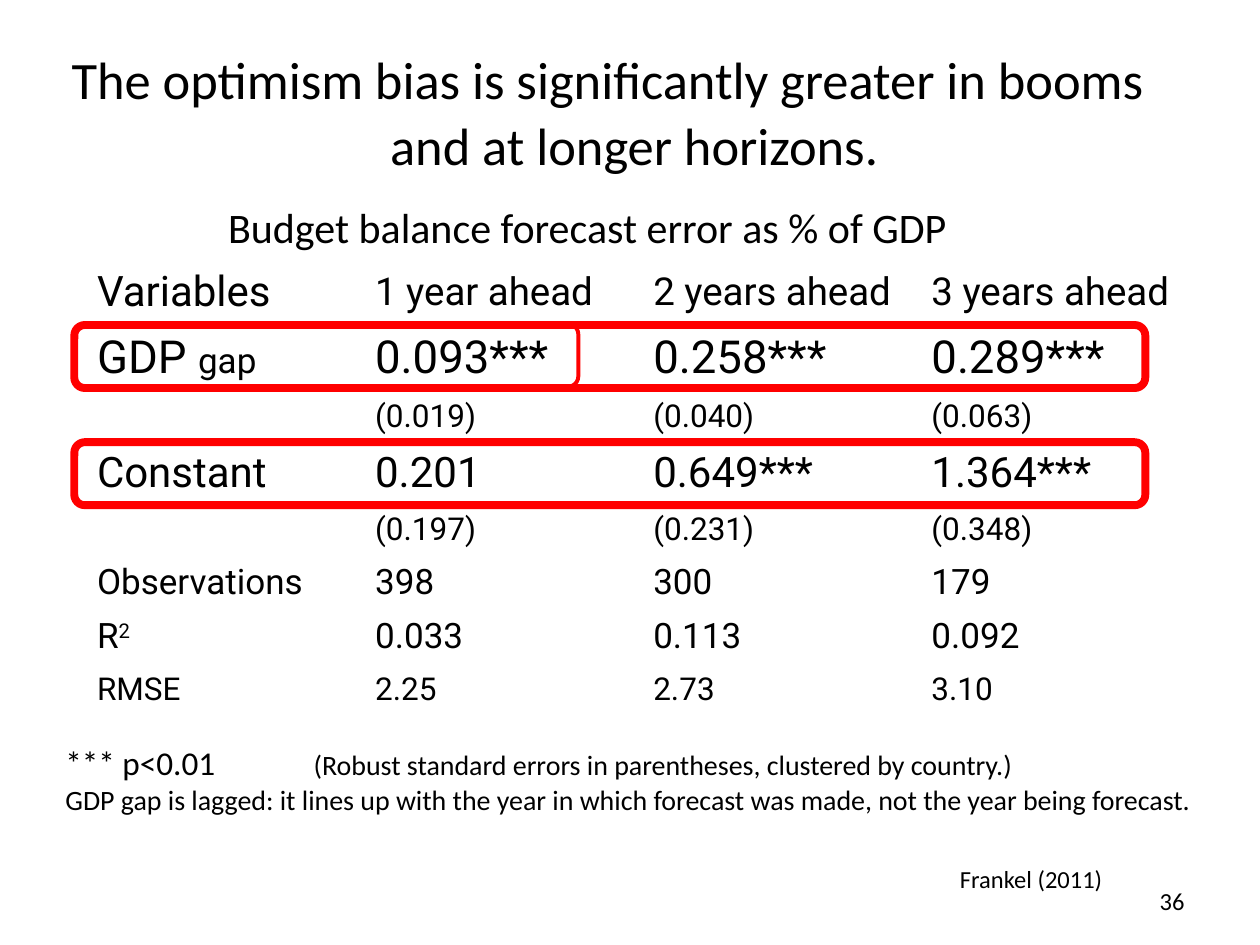
import pptx
import pptx.util
import pptx.dml.color
import pptx.enum.shapes
import pptx.enum.text
import lxml.etree
from pptx.util import Inches, Pt

COLORS = {"text": "000000", "paper": "FFFFFF", "highlight": "FF0000"}
ALIGN = pptx.enum.text.PP_ALIGN
MIDDLE = pptx.enum.text.MSO_ANCHOR.MIDDLE
SHAPES = pptx.enum.shapes.MSO_SHAPE


def color(name):
    return pptx.dml.color.RGBColor.from_string(COLORS[name])


class SlideBuilder:
    body_font = "Calibri"
    table_font = "Roboto"

    def __init__(self, deck):
        self.page = deck.slides.add_slide(deck.slide_layouts[5])

    def style(self, font, size, name=None):
        font.name = name or self.body_font
        font.size = Pt(size)
        font.color.rgb = color("text")

    def title(self, lines, bounds, size, pitch, second_indent):
        box = self.page.shapes.title
        box.left, box.top, box.width, box.height = map(Inches, bounds)
        frame = box.text_frame
        frame.text = "\n".join(lines)
        frame.margin_left = frame.margin_right = 0
        frame.vertical_anchor = MIDDLE
        for para in frame.paragraphs:
            para.alignment = ALIGN.CENTER
            para.line_spacing = Pt(pitch)
            self.style(para.font, size)
        frame.paragraphs[1]._p.get_or_add_pPr().set("marL", str(Inches(second_indent)))

    def text(self, words, bounds, size, align=ALIGN.LEFT, anchor=pptx.enum.text.MSO_ANCHOR.TOP):
        box = self.page.shapes.add_textbox(*map(Inches, bounds))
        frame = box.text_frame
        frame.word_wrap = True
        frame.vertical_anchor = anchor
        para = frame.paragraphs[0]
        para.text = words
        para.alignment = align
        self.style(para.font, size)

    def panel(self, paragraphs, bounds, tab=None):
        box = self.page.shapes.add_shape(SHAPES.RECTANGLE, *map(Inches, bounds))
        box.shadow.inherit = False
        box.fill.solid()
        box.fill.fore_color.rgb = color("paper")
        box.line.fill.background()
        frame = box.text_frame
        frame.word_wrap = True
        frame.vertical_anchor = MIDDLE
        frame.margin_left = frame.margin_right = Inches(0.01)
        frame.margin_top = frame.margin_bottom = Inches(0.01)
        for index, runs in enumerate(paragraphs):
            para = frame.paragraphs[0] if index == 0 else frame.add_paragraph()
            para.alignment = ALIGN.LEFT
            if tab:
                properties = para._p.get_or_add_pPr()
                tabs = lxml.etree.SubElement(properties, pptx.oxml.ns.qn("a:tabLst"))
                stop = lxml.etree.SubElement(tabs, pptx.oxml.ns.qn("a:tab"))
                stop.set("pos", str(Inches(tab)))
                stop.set("algn", "l")
            self.runs(para, runs)

    def runs(self, para, runs, name=None):
        for words, size in runs:
            span = para.add_run()
            span.text = words
            self.style(span.font, size, name)

    def outline(self, bounds, weight):
        box = self.page.shapes.add_shape(SHAPES.ROUNDED_RECTANGLE, *map(Inches, bounds))
        box.shadow.inherit = False
        box.fill.background()
        box.line.color.rgb = color("highlight")
        box.line.width = Pt(weight)

    def table(self, rows, bounds):
        columns = len(rows[0][2]) + 1
        table = self.page.shapes.add_table(len(rows), columns, *map(Inches, bounds)).table
        table.first_row = table.horz_banding = False
        for row_index, (height, label, values, size) in enumerate(rows):
            table.rows[row_index].height = Inches(height)
            for column_index, words in enumerate([""] + values):
                cell = table.cell(row_index, column_index)
                cell.fill.background()
                cell.vertical_anchor = MIDDLE
                para = cell.text_frame.paragraphs[0]
                self.style(para.font, size, self.table_font)
                if column_index == 0:
                    self.runs(para, label, self.table_font)
                else:
                    para.text = words
        return table


def main():
    deck = pptx.Presentation()
    deck.slide_width, deck.slide_height = Inches(10), Inches(7.5)
    slide = SlideBuilder(deck)

    slide.title(
        ["The optimism bias is significantly greater in booms", "and at longer horizons."],
        (0.46, 0.34, 8.73, 1.07), 30, 37.6, 0.42)
    slide.text("36", (7.17, 6.95, 2.33, 0.4), 14, ALIGN.RIGHT, MIDDLE)

    rows = [
        (0.5, [("Variables", 24)], ["1 year ahead", "2 years ahead", "3 years ahead"], 22),
        (0.53, [("GDP ", 26), ("gap", 20)], ["0.093***", "0.258***", "0.289***"], 26),
        (0.4, [], ["(0.019)", "(0.040)", "(0.063)"], 18),
        (0.5, [("Constant", 24)], ["0.201", "0.649***", "1.364***"], 24),
        (0.4, [], ["(0.197)", "(0.231)", "(0.348)"], 18),
        (0.43, [("Observations", 20)], ["398", "300", "179"], 20),
        (0.43, [("R", 20), ("2", 20)], ["0.033", "0.113", "0.092"], 20),
        (0.4, [("RMSE", 18)], ["2.25", "2.73", "3.10"], 18),
    ]
    table = slide.table(rows, (0.67, 2.07, 8.83, 3.6))
    exponent = table.cell(6, 0).text_frame.paragraphs[0].runs[1]
    exponent.font._element.set("baseline", "30000")

    slide.panel([[("Budget balance forecast error as % of GDP", 24)]], (1.8, 1.59, 6.59, 0.42))
    slide.panel([
        [("*** p<0.01\t", 19),
         ("(Robust standard errors in parentheses, clustered by country.)", 16)],
        [("GDP gap is lagged: it lines up with the year in which forecast was made, "
          "not the year being forecast.", 16)],
    ], (0.51, 5.88, 9.13, 0.61), tab=1.97)

    slide.text("Frankel (2011)", (7.52, 6.81, 1.5, 0.4), 14)

    for top, width, weight in [(3.5, 8.5, 2.25), (2.58, 8.5, 4.5), (2.57, 4, 2.25), (3.51, 8.5, 4.5)]:
        slide.outline((0.59, top, width, 0.5), weight)

    deck.save("out.pptx")


if __name__ == "__main__":
    main()
